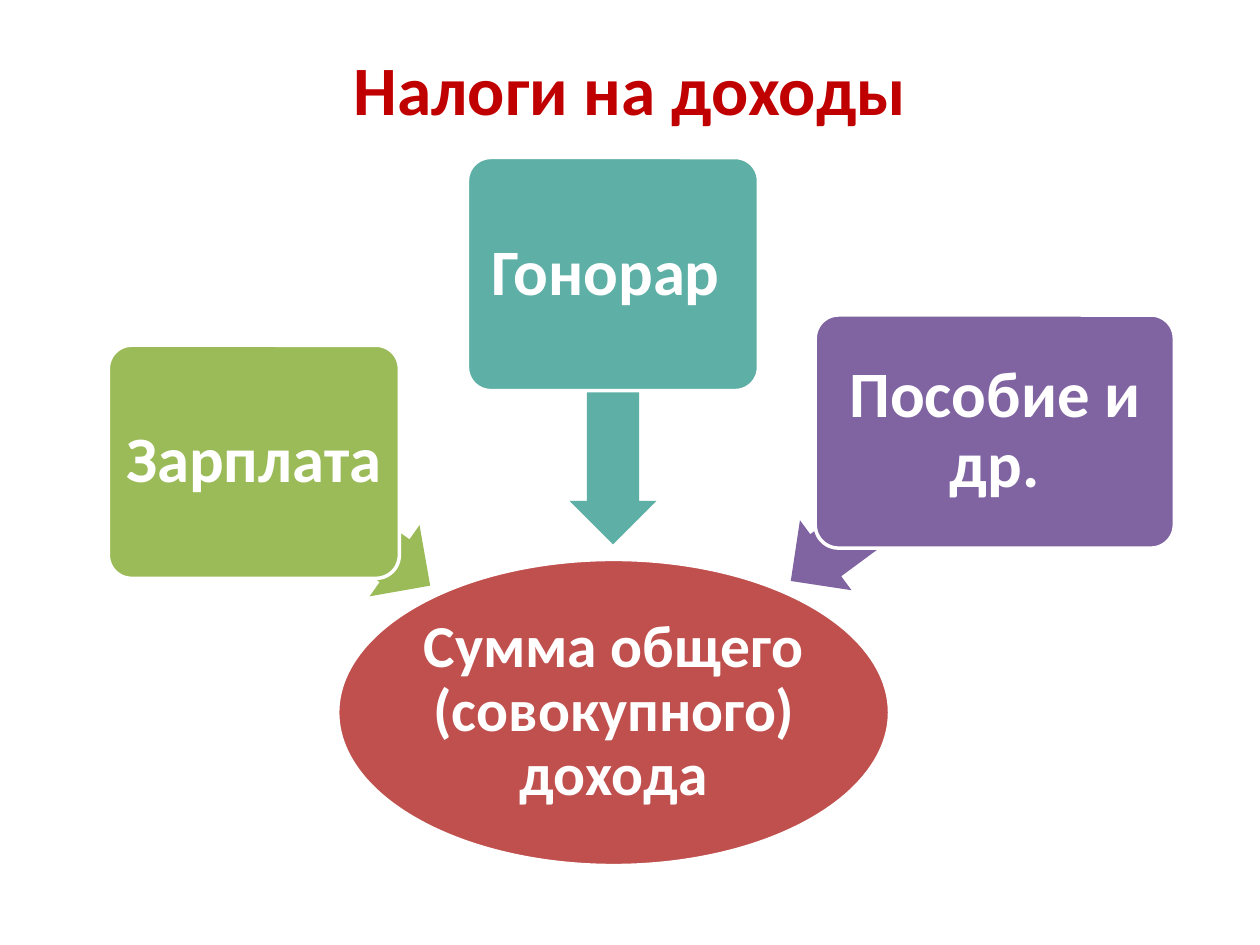
from pptx import Presentation
from pptx import util as u
from pptx.dml import color
from pptx.enum import shapes, text

KIND = shapes.MSO_SHAPE


def tint(code):
    return color.RGBColor.from_string(code)


class Deck:
    font = "Calibri"
    white = "FFFFFF"

    def __init__(self, wide, high):
        self.prs = Presentation()
        self.prs.slide_width = u.Inches(wide)
        self.prs.slide_height = u.Inches(high)
        self.slide = self.prs.slides.add_slide(self.prs.slide_layouts[5])

    def label(self, frame, words, size, code):
        frame.word_wrap = True
        frame.auto_size = text.MSO_AUTO_SIZE.NONE
        frame.vertical_anchor = text.MSO_ANCHOR.MIDDLE
        para = frame.paragraphs[0]
        para.alignment = text.PP_ALIGN.CENTER
        run = para.add_run()
        run.text = words
        run.font.name = self.font
        run.font.size = u.Pt(size)
        run.font.bold = True
        run.font.color.rgb = tint(code)
        return para

    def title(self, words, box, size, code):
        head = self.slide.shapes.title
        head.left, head.top, head.width, head.height = map(u.Inches, box)
        self.label(head.text_frame, words, size, code)

    def shape(self, kind, box, fill):
        item = self.slide.shapes.add_shape(kind, *map(u.Inches, box))
        item.shadow.inherit = False
        item.fill.solid()
        item.fill.fore_color.rgb = tint(fill)
        item.line.fill.background()
        return item

    def block(self, kind, box, fill, words, size, inset):
        item = self.shape(kind, box, fill)
        item.line.color.rgb = tint(self.white)
        item.line.width = u.Pt(2)
        if kind == KIND.ROUNDED_RECTANGLE:
            item.adjustments[0] = 0.1
        frame = item.text_frame
        frame.margin_left = frame.margin_right = u.Inches(inset)
        frame.margin_top = frame.margin_bottom = u.Inches(inset)
        para = self.label(frame, words, size, self.white)
        para.line_spacing = 0.9

    def arrow(self, box, turn, fill):
        item = self.shape(KIND.LEFT_ARROW, box, fill)
        item.adjustments[0] = 0.6
        item.adjustments[1] = 0.5
        item.rotation = turn


def main():
    deck = Deck(10, 7.5)
    deck.title("Налоги на доходы", (0.5, 0.3, 9, 0.79), 39.6, "C00000")

    # Total income
    deck.block(KIND.OVAL, (2.68, 4.44, 4.38, 2.43), "C0504D",
               "Сумма общего (совокупного) дохода", 34, 0.02)

    # Sources of income: words, colour, box left, top, width,
    # then arrow left, top, length, turn
    parts = [
        ("Зарплата ", "9BBB59", 0.86, 2.74, 2.31, 1.85, 3.81, 1.72, 215),
        ("Гонорар ", "5EAFA6", 3.71, 1.25, 2.31, 3.79, 2.9, 2.15, 270),
        ("Пособие и др.", "8064A2", 6.47, 2.5, 2.85, 6.08, 3.67, 2.01, 323.6),
    ]
    for words, fill, left, top, wide, x, y, span, turn in parts:
        deck.arrow((x, y, span, 0.69), turn, fill)
        deck.block(KIND.ROUNDED_RECTANGLE, (left, top, wide, 1.85), fill,
                   words, 37, 0.08)

    deck.prs.save("out.pptx")


if __name__ == "__main__":
    main()
